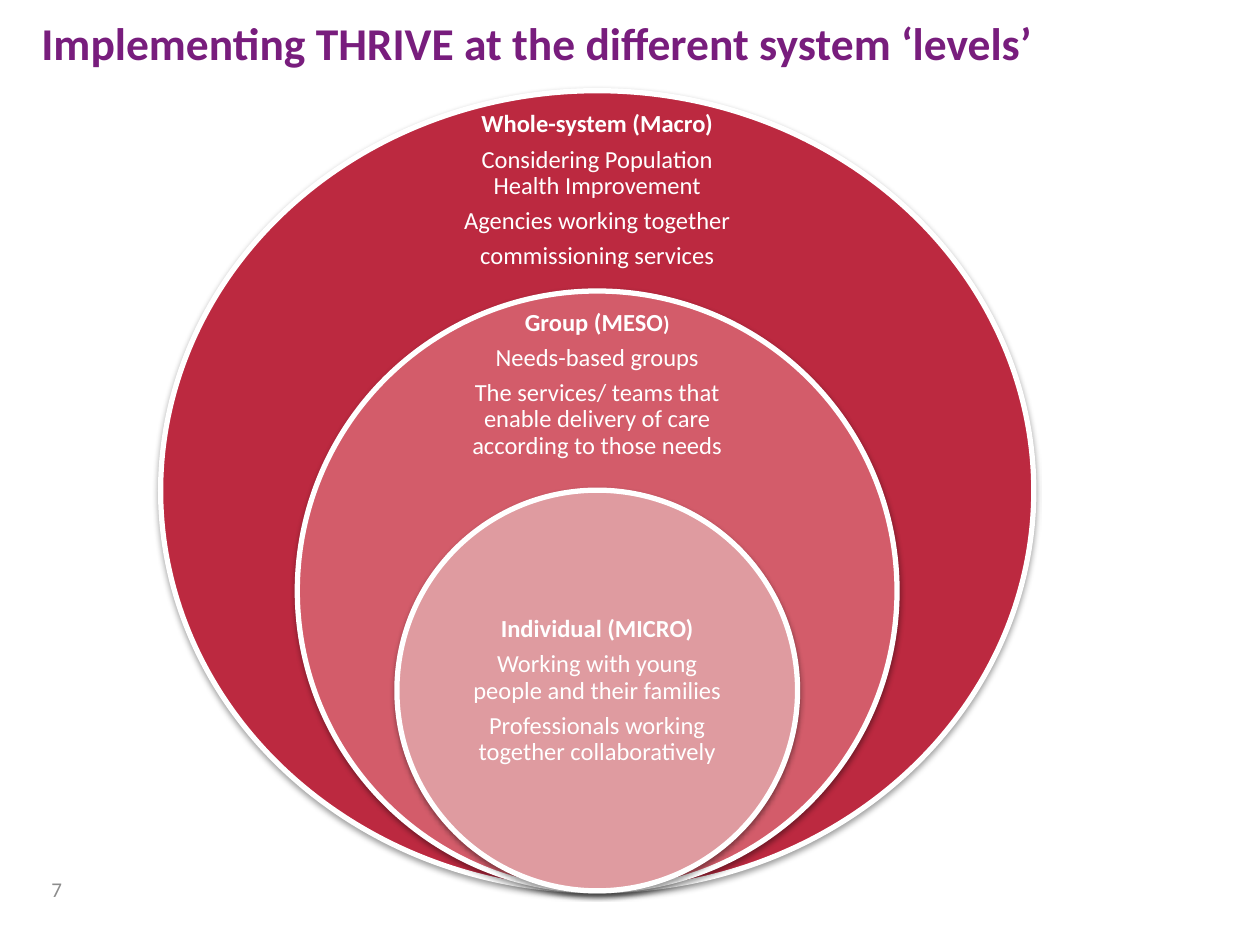
from lxml import etree
from pptx import Presentation
from pptx.dml.color import RGBColor
from pptx.enum.shapes import MSO_SHAPE
from pptx.enum.text import MSO_ANCHOR, PP_ALIGN
from pptx.oxml.ns import qn
from pptx.util import Inches, Pt

OVAL = MSO_SHAPE.OVAL
TOP, MIDDLE = MSO_ANCHOR.TOP, MSO_ANCHOR.MIDDLE
LEFT, CENTER, RIGHT = PP_ALIGN.LEFT, PP_ALIGN.CENTER, PP_ALIGN.RIGHT

COLORS = {
    "title": "781D7D", "number": "8C8C8C", "white": "FFFFFF", "shadow": "000000",
    "macro": "BC2940", "meso": "D35C6A", "micro": "DF9BA0",
}
TITLE = "Implementing THRIVE at the different system ‘levels’"
MID, BASE = 4.74, 7.07
LEVELS = [
    {"fill": "macro", "size": (6.93, 6.35), "text": (1.04, 2.42, 0.95), "lines": [
        [("Whole-system (Macro)", 14, True)],
        [("Considering Population Health Improvement", 14, False)],
        [("Agencies working together", 14, False)],
        [("commissioning services", 14, False)],
    ]},
    {"fill": "meso", "size": (4.76, 4.76), "text": (2.61, 2.22, 0.89), "lines": [
        [("Group (MESO", 14, True), (")", 12, True)],
        [("Needs-based groups", 14, False)],
        [("The services/ teams that enable delivery of care "
          "according to those needs", 14, False)],
    ]},
    {"fill": "micro", "size": (3.18, 3.18), "text": (4.69, 2.25, 1.59), "lines": [
        [("Individual (MICRO)", 14, True)],
        [("Working with young people and their families", 14, False)],
        [("Professionals working together collaboratively", 14, False)],
    ]},
]


def color(name):
    return RGBColor.from_string(COLORS[name])


def add_text(slide, box, lines, tint, align, anchor, inset=None, space=None, after=0):
    frame = slide.shapes.add_textbox(*map(Inches, box)).text_frame
    frame.word_wrap = True
    frame.vertical_anchor = anchor
    if inset is not None:
        frame.margin_left = frame.margin_right = Inches(inset)
        frame.margin_top = frame.margin_bottom = Inches(inset)
    for i, line in enumerate(lines):
        para = frame.add_paragraph() if i else frame.paragraphs[0]
        para.alignment = align
        para.line_spacing = space
        para.space_after = Pt(after)
        for words, size, bold in line:
            run = para.add_run()
            run.text = words
            run.font.name = "Calibri"
            run.font.size = Pt(size)
            run.font.bold = bold
            run.font.color.rgb = color(tint)


def add_shadow(shape):
    shape.shadow.inherit = False
    effects = shape._element.spPr.find(qn("a:effectLst"))
    outer = etree.SubElement(effects, qn("a:outerShdw"), blurRad=str(Pt(3.1)),
                             dist=str(Pt(1.6)), dir="5400000", rotWithShape="0")
    tint = etree.SubElement(outer, qn("a:srgbClr"), val=COLORS["shadow"])
    etree.SubElement(tint, qn("a:alpha"), val="38000")


def add_level(slide, level):
    width, height = level["size"]
    box = (MID - width / 2, BASE - height, width, height)
    oval = slide.shapes.add_shape(OVAL, *map(Inches, box))
    oval.fill.solid()
    oval.fill.fore_color.rgb = color(level["fill"])
    oval.line.color.rgb = color("white")
    oval.line.width = Pt(3)
    add_shadow(oval)
    top, width, height = level["text"]
    add_text(slide, (MID - width / 2, top, width, height), level["lines"],
             "white", CENTER, MIDDLE, inset=0.11, space=0.9, after=4.9)


def main():
    deck = Presentation()
    deck.slide_width, deck.slide_height = Inches(10), Inches(7.5)
    slide = deck.slides.add_slide(deck.slide_layouts[6])
    add_text(slide, (0.12, 6.86, 0.47, 0.4), [[("7", 12, False)]],
             "number", RIGHT, MIDDLE)
    add_text(slide, (0.23, 0.07, 9.19, 0.63), [[(TITLE, 26, True)]],
             "title", LEFT, TOP)
    for level in LEVELS:
        add_level(slide, level)
    deck.save("out.pptx")


if __name__ == "__main__":
    main()
